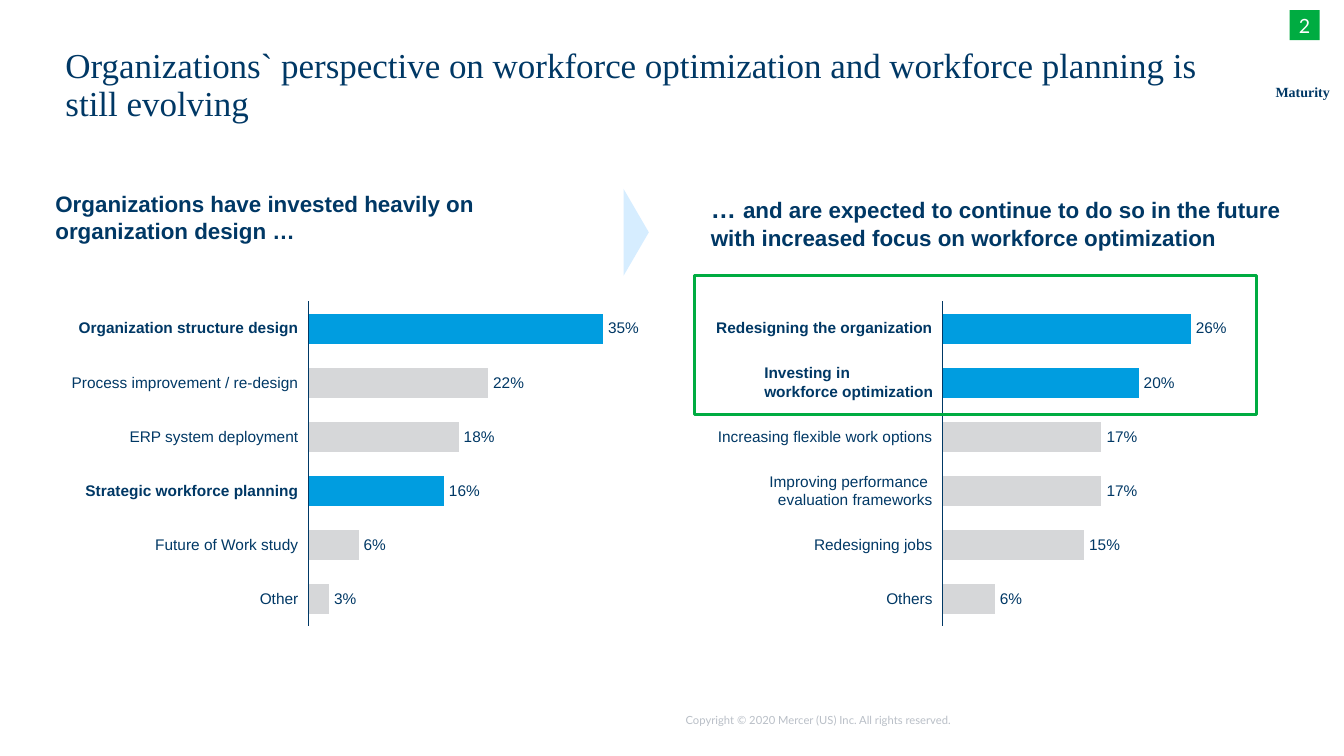
import pptx
import pptx.chart.data
import pptx.dml.color
import pptx.enum.chart
import pptx.enum.shapes
import pptx.enum.text
import pptx.oxml
import pptx.oxml.ns
import pptx.util

NAVY = pptx.dml.color.RGBColor(0x00, 0x38, 0x65)
BLUE = pptx.dml.color.RGBColor(0x00, 0x9D, 0xE0)
PALE = pptx.dml.color.RGBColor(0xD6, 0xED, 0xFF)
GRAY = pptx.dml.color.RGBColor(0xD6, 0xD7, 0xD9)
MUTED = pptx.dml.color.RGBColor(0xB9, 0xBF, 0xC7)
GREEN = pptx.dml.color.RGBColor(0x00, 0xAC, 0x41)
WHITE = pptx.dml.color.RGBColor(0xFF, 0xFF, 0xFF)

ALIGN = pptx.enum.text.PP_ALIGN
ANCHOR = pptx.enum.text.MSO_ANCHOR
SHAPE = pptx.enum.shapes.MSO_SHAPE
CHART = pptx.enum.chart
SLACK = 12  # spare label width, so that no label breaks

# Each row: label, label width, bar length, share, emphasis, alignment
PAST = [
    ("Organization structure design", 217, 100, "35%", True, ALIGN.RIGHT),
    ("Process improvement / re-design", 224, 61, "22%", False, ALIGN.RIGHT),
    ("ERP system deployment", 167, 51, "18%", False, ALIGN.RIGHT),
    ("Strategic workforce planning", 210, 46, "16%", True, ALIGN.RIGHT),
    ("Future of Work study", 141, 17, "6%", False, ALIGN.RIGHT),
    ("Other", 38, 7, "3%", False, ALIGN.RIGHT),
]
FUTURE = [
    ("Redesigning the organization", 214, 100, "26%", True, ALIGN.RIGHT),
    ("Investing in\vworkforce optimization", 167, 79, "20%", True, ALIGN.LEFT),
    ("Increasing flexible work options", 212, 64, "17%", False, ALIGN.RIGHT),
    ("Improving performance \vevaluation frameworks", 161, 64, "17%", False,
     ALIGN.RIGHT),
    ("Redesigning jobs", 118, 57, "15%", False, ALIGN.RIGHT),
    ("Others", 46, 21, "6%", False, ALIGN.RIGHT),
]


def px(size):
    """Turn hundredths of an inch into EMU."""
    return pptx.util.Emu(round(size * 9144))


def apply(target, values):
    for name, value in values.items():
        setattr(target, name, value)


class Page:
    """Holds the text style and the slide being drawn."""

    def __init__(self, slide):
        self.shapes = slide.shapes
        self.style = {"name": "Arial", "size": 11, "bold": False}

    def set_font(self, font, color=NAVY, **style):
        values = {**self.style, **style}
        apply(font, {**values, "size": pptx.util.Pt(values["size"])})
        font.color.rgb = color

    def fill_text(self, frame, text, align=ALIGN.LEFT, anchor=ANCHOR.TOP,
                  wrap=True, side=0, spacing=None, **style):
        apply(frame, {
            "margin_left": px(side), "margin_right": px(side),
            "margin_top": 0, "margin_bottom": 0,
            "word_wrap": wrap, "vertical_anchor": anchor,
        })
        para = frame.paragraphs[0]
        para.text = text
        apply(para, {"alignment": align, "line_spacing": spacing})
        for run in para.runs:
            self.set_font(run.font, **style)
        return para

    def text(self, box, text, **style):
        frame = self.shapes.add_textbox(*map(px, box)).text_frame
        return self.fill_text(frame, text, **style)

    def shape(self, kind, box, fill=None, line=None, turn=0):
        shape = self.shapes.add_shape(kind, *map(px, box))
        shape.shadow.inherit = False
        shape.rotation = turn
        if fill is None:
            shape.fill.background()
        else:
            shape.fill.solid()
            shape.fill.fore_color.rgb = fill
        if line is None:
            shape.line.fill.background()
        else:
            shape.line.color.rgb = line
            shape.line.width = pptx.util.Pt(2.25)
        return shape

    def place_plot(self, chart, inset):
        """Fix the inner plot area as fractions of the chart."""
        area = chart.element.xpath("//c:plotArea")[0]
        for old in area.xpath("c:layout"):
            area.remove(old)
        spots = {"x": inset, "y": 0.027, "w": 1 - 2 * inset, "h": 0.947}
        modes = '<c:xMode val="edge"/><c:yMode val="edge"/>'
        sizes = "".join(f'<c:{key} val="{val:.3f}"/>'
                        for key, val in spots.items())
        area.insert(0, pptx.oxml.parse_xml(
            f'<c:layout {pptx.oxml.ns.nsdecls("c")}><c:manualLayout>'
            f'<c:layoutTarget val="inner"/>{modes}{sizes}'
            '</c:manualLayout></c:layout>'))

    def chart(self, left, width, inset, rows):
        data = pptx.chart.data.CategoryChartData()
        data.categories = [str(rank + 1) for rank in range(len(rows))]
        data.add_series("Series 1", [row[2] for row in rows])
        chart = self.shapes.add_chart(
            CHART.XL_CHART_TYPE.BAR_STACKED,
            *map(px, (left, 290, width, 340)), data).chart
        apply(chart, {"has_legend": False, "has_title": False})
        self.set_font(chart.font, name="Lato", size=10)
        self.place_plot(chart, inset)
        apply(chart.value_axis, {
            "minimum_scale": 0, "maximum_scale": 100,
            "has_major_gridlines": False, "visible": False,
        })
        axis = chart.category_axis
        apply(axis, {
            "reverse_order": True,
            "major_tick_mark": CHART.XL_TICK_MARK.NONE,
            "minor_tick_mark": CHART.XL_TICK_MARK.NONE,
            "tick_label_position": CHART.XL_TICK_LABEL_POSITION.NONE,
        })
        axis.format.line.color.rgb = NAVY
        axis.format.line.width = pptx.util.Pt(0.75)
        plot = chart.plots[0]
        apply(plot, {"gap_width": 80, "overlap": 100,
                     "vary_by_categories": False})
        bars = plot.series[0]
        bars.format.fill.solid()
        bars.format.fill.fore_color.rgb = GRAY
        for rank, row in enumerate(rows):
            if row[4]:
                fill = bars.points[rank].format.fill
                fill.solid()
                fill.fore_color.rgb = BLUE

    def bars(self, left, width, inset, rows):
        """Draw a bar chart with row names and shares beside the bars."""
        self.chart(left, width, inset, rows)
        start = left + width * inset
        full = width * (1 - 2 * inset)
        for rank, (name, wide, value, share, bold, align) in enumerate(rows):
            mid = 325 + 53.8 * rank
            high = 37 if "\v" in name else 18
            shift = SLACK if align == ALIGN.RIGHT else 0
            self.text((left - 1 - wide - shift, mid - high / 2,
                       wide + SLACK, high), name,
                      align=align, anchor=ANCHOR.MIDDLE, bold=bold)
            end = start + full * value / 100 + 3
            self.text((end, mid - 9, 11 + 8 * len(share), 18), share,
                      anchor=ANCHOR.MIDDLE, wrap=False, side=2)


def main():
    deck = pptx.Presentation()
    apply(deck, {"slide_width": px(1333), "slide_height": px(750)})
    page = Page(deck.slides.add_slide(deck.slide_layouts[6]))

    page.text((680, 708, 458, 30),
              "Copyright © 2020 Mercer (US) Inc. All rights reserved.",
              wrap=False, name="Lato", size=8, color=MUTED)
    page.text((65, 48, 1160, 104),
              "Organizations` perspective on workforce optimization and "
              "workforce planning is still evolving",
              spacing=0.9, name="Times New Roman", size=25)
    page.text((1263, 79, 58, 25), "Maturity", align=ALIGN.CENTER,
              anchor=ANCHOR.MIDDLE, name="Times New Roman", size=10, bold=True)

    page.text((55, 189, 613, 23),
              "Organizations have invested heavily on \vorganization design …",
              size=16, bold=True)
    page.bars(297, 310, 0.029, PAST)

    page.bars(926, 264, 0.034, FUTURE)
    lead = page.text((705, 192, 598, 23), "… ", size=18, bold=True)
    rest = lead.add_run()
    rest.text = ("and are expected to continue to do so in the future "
                 "with increased focus on workforce optimization")
    page.set_font(rest.font, size=16, bold=True)

    page.shape(SHAPE.ISOSCELES_TRIANGLE, (588, 218, 86, 25), fill=PALE, turn=90)
    page.shape(SHAPE.RECTANGLE, (689, 273, 557, 138), line=GREEN)
    badge = page.shape(SHAPE.RECTANGLE, (1279, 10, 30, 30), fill=GREEN)
    page.fill_text(badge.text_frame, "2", align=ALIGN.CENTER,
                   anchor=ANCHOR.MIDDLE, name="Lato", size=14, color=WHITE)

    deck.save("out.pptx")


if __name__ == "__main__":
    main()
